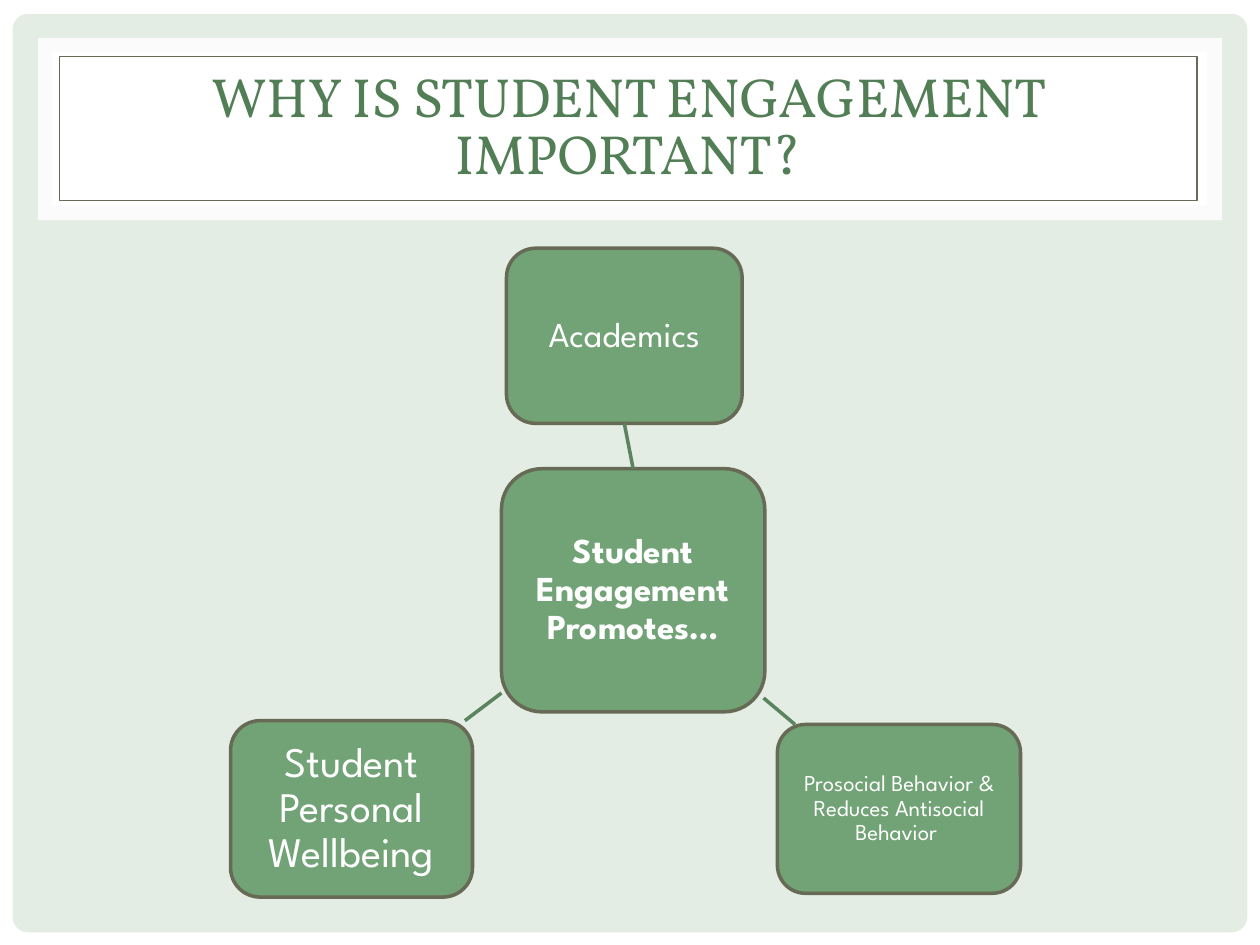
"""Build a slide showing what student engagement promotes."""
from lxml.etree import SubElement
from pptx import Presentation
from pptx.dml.color import RGBColor
from pptx.enum.shapes import MSO_CONNECTOR, MSO_SHAPE
from pptx.enum.text import MSO_ANCHOR, MSO_AUTO_SIZE, PP_ALIGN
from pptx.oxml.ns import qn
from pptx.util import Inches, Pt

PALE, WHITE, GREEN, OLIVE = "E3EDE4", "FFFFFF", "72A376", "676A55"


def paint(color_format, value):
    color_format.solid()
    color_format.fore_color.rgb = RGBColor.from_string(value)


def write(shape, text, font, size, color, spacing, inset):
    frame = shape.text_frame
    frame.text = text
    frame.word_wrap = True
    frame.auto_size = MSO_AUTO_SIZE.NONE
    frame.vertical_anchor = MSO_ANCHOR.MIDDLE
    frame.margin_left = frame.margin_right = Inches(inset)
    frame.margin_top = frame.margin_bottom = Inches(inset)
    para = frame.paragraphs[0]
    para.alignment = PP_ALIGN.CENTER
    para.line_spacing = spacing
    span = para.runs[0]
    span.font.name = font
    span.font.size = Pt(size)
    paint(span.font.fill, color)
    return span


deck = Presentation()
deck.slide_width, deck.slide_height = Inches(10), Inches(7.5)
page = deck.slides.add_slide(deck.slide_layouts[5])
paint(page.background.fill, PALE)

panels = [
    (MSO_SHAPE.RECTANGLE, 0, 0, 10, 7.5, WHITE),
    (MSO_SHAPE.ROUNDED_RECTANGLE, 0.1, 0.11, 9.8, 7.29, PALE),
    (MSO_SHAPE.RECTANGLE, 0.3, 0.3, 9.4, 1.45, WHITE),
    (MSO_SHAPE.RECTANGLE, 0.41, 0.41, 9.17, 1.22, WHITE),
]
backdrop = []
for kind, left, top, width, height, color in panels:
    panel = page.shapes.add_shape(kind, Inches(left), Inches(top), Inches(width), Inches(height))
    panel.shadow.inherit = False
    paint(panel.fill, color)
    panel.line.fill.background()
    backdrop.append(panel)
backdrop[1].adjustments[0] = 0.017
band_color = backdrop[2].fill._xPr.find(qn("a:solidFill"))[0]
SubElement(band_color, qn("a:alpha"), val="83000")

title = page.shapes.title
title.left, title.top = Inches(0.47), Inches(0.45)
title.width, title.height = Inches(9.03), Inches(1.14)
paint(title.line.fill, OLIVE)
title.line.width = Pt(0.75)
write(title, "WHY IS STUDENT ENGAGEMENT IMPORTANT?", "Vollkorn", 31.5, "527E56", 0.86, 0.05)
backdrop[-1]._element.addnext(title._element)

topics = [
    ("Student Engagement Promotes…", 3.98, 3.72, 2.09, 1.93, 20, 0.06),
    ("Academics", 4.02, 1.97, 1.87, 1.39, 20, 0.06),
    ("Prosocial Behavior & Reduces Antisocial Behavior ", 6.17, 5.75, 1.93, 1.34, 13, 0.04),
    ("Student Personal Wellbeing", 1.83, 5.72, 1.92, 1.4, 24, 0.07),
]
boxes, spans = [], []
for text, left, top, width, height, size, inset in topics:
    box = page.shapes.add_shape(
        MSO_SHAPE.ROUNDED_RECTANGLE, Inches(left), Inches(top), Inches(width), Inches(height)
    )
    box.shadow.inherit = False
    paint(box.fill, GREEN)
    paint(box.line.fill, OLIVE)
    box.line.width = Pt(2)
    spans.append(write(box, text, "League Spartan", size, WHITE, 0.9, inset))
    boxes.append(box)
hub, academics = boxes[:2]
spans[0].font.bold = True

links = []
for points in [(4.99, 3.72, 4.98, 3.36), (6.06, 5.54, 6.31, 5.75), (3.98, 5.5, 3.69, 5.72)]:
    link = page.shapes.add_connector(MSO_CONNECTOR.STRAIGHT, *map(Inches, points))
    paint(link.line.fill, "5B835E")
    link.line.width = Pt(2)
    SubElement(link._element.spPr, qn("a:effectLst"))
    links.append(link)
links[0].begin_connect(hub, 0)
links[0].end_connect(academics, 2)

deck.save("out.pptx")
